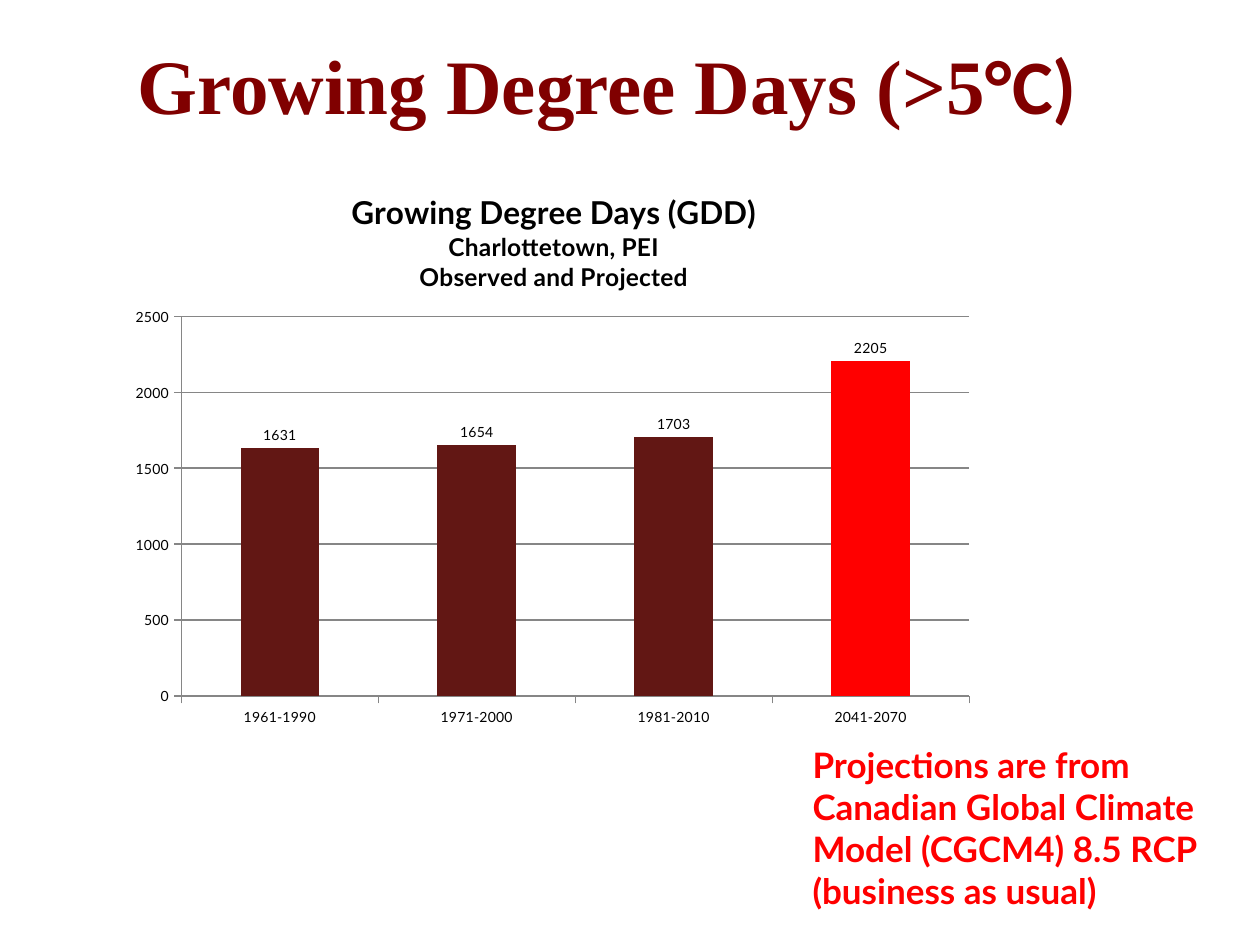
import pptx
import pptx.chart.data
import pptx.dml.color
import pptx.enum.chart
import pptx.enum.text
import pptx.oxml
import pptx.oxml.ns
import pptx.util
from pptx.util import Inches

MAROON = pptx.dml.color.RGBColor(0x80, 0x00, 0x00)
BROWN = pptx.dml.color.RGBColor(0x62, 0x17, 0x14)
RED = pptx.dml.color.RGBColor(0xFF, 0x00, 0x00)
BLACK = pptx.dml.color.RGBColor(0x00, 0x00, 0x00)
GRAY = pptx.dml.color.RGBColor(0x86, 0x86, 0x86)


def add_span(para, text, font, size, color):
    """Add one bold run to a paragraph."""
    span = para.add_run()
    span.text = text
    span.font.name = font
    span.font.size = pptx.util.Pt(size)
    span.font.bold = True
    span.font.color.rgb = color


def add_text_frame(page, bounds):
    """Add a wrapping text box and return its frame."""
    frame = page.shapes.add_textbox(*bounds).text_frame
    frame.word_wrap = True
    return frame


def add_title(page, bounds):
    """Place the centred page title."""
    frame = add_text_frame(page, bounds)
    frame.vertical_anchor = pptx.enum.text.MSO_ANCHOR.MIDDLE
    para = frame.paragraphs[0]
    para.alignment = pptx.enum.text.PP_ALIGN.CENTER
    add_span(para, "Growing Degree Days (>5", "Times New Roman", 44, MAROON)
    add_span(para, "°C)", "Calibri", 44, MAROON)


def add_projection_note(page, bounds):
    """Place the note on the source of the projections."""
    frame = add_text_frame(page, bounds)
    lines = [
        "Projections are from",
        "Canadian Global Climate Model (CGCM4) 8.5 RCP",
        "(business as usual)",
    ]
    for index, line in enumerate(lines):
        para = frame.add_paragraph() if index else frame.paragraphs[0]
        add_span(para, line, "Lato", 20, RED)


def set_plot_layout(chart, **fractions):
    """Fix the inner plot area as fractions of the chart."""
    area = chart._chartSpace.chart.plotArea
    for old in area.findall(pptx.oxml.ns.qn("c:layout")):
        area.remove(old)
    values = "".join(f'<c:{key} val="{value}"/>' for key, value in fractions.items())
    area.insert(0, pptx.oxml.parse_xml(
        f'<c:layout {pptx.oxml.ns.nsdecls("c")}><c:manualLayout>'
        '<c:layoutTarget val="inner"/><c:xMode val="edge"/><c:yMode val="edge"/>'
        f'{values}</c:manualLayout></c:layout>'))


def add_chart_title(chart):
    """Write the three-line chart title."""
    frame = chart.chart_title.text_frame
    chart.chart_title.include_in_layout = False
    lines = [("Growing Degree Days (GDD)", 18), ("Charlottetown, PEI", 14),
             ("Observed and Projected", 14)]
    for index, (line, size) in enumerate(lines):
        para = frame.add_paragraph() if index else frame.paragraphs[0]
        add_span(para, line, "Lato", size, BLACK)


def style_axes(chart):
    """Style the axes and the gridlines."""
    for axis in (chart.category_axis, chart.value_axis):
        axis.major_tick_mark = pptx.enum.chart.XL_TICK_MARK.OUTSIDE
        axis.minor_tick_mark = pptx.enum.chart.XL_TICK_MARK.NONE
        axis.format.line.color.rgb = GRAY
        axis.format.line.width = pptx.util.Pt(0.75)
    scale = chart.value_axis
    scale.minimum_scale, scale.maximum_scale, scale.major_unit = 0, 2500, 500
    scale.has_major_gridlines = True
    scale.major_gridlines.format.line.color.rgb = GRAY
    scale.major_gridlines.format.line.width = pptx.util.Pt(0.75)


def add_degree_days_chart(page, bounds):
    """Place the column chart of growing degree days."""
    data = pptx.chart.data.CategoryChartData(number_format="General")
    data.categories = ["1961-1990", "1971-2000", "1981-2010", "2041-2070"]
    data.add_series("Series 1", [1631, 1654, 1703, 2205])
    kind = pptx.enum.chart.XL_CHART_TYPE.COLUMN_CLUSTERED
    chart = page.shapes.add_chart(kind, *bounds, data).chart
    chart.has_legend = False
    chart.font.name = "Lato"
    chart.font.size = pptx.util.Pt(8)
    chart.font.color.rgb = BLACK
    add_chart_title(chart)
    style_axes(chart)
    set_plot_layout(chart, x=0.07, y=0.26, w=0.91, h=0.67)

    plot = chart.plots[0]
    plot.gap_width = 150
    plot.vary_by_categories = False
    columns = plot.series[0]
    columns.format.fill.solid()
    columns.format.fill.fore_color.rgb = BROWN
    projected = columns.points[3].format.fill
    projected.solid()
    projected.fore_color.rgb = RED
    labels = columns.data_labels
    labels.show_value = True
    labels.position = pptx.enum.chart.XL_LABEL_POSITION.OUTSIDE_END


def main():
    """Build the deck."""
    deck = pptx.Presentation()
    deck.slide_width, deck.slide_height = Inches(10), Inches(7.5)
    page = deck.slides.add_slide(deck.slide_layouts[6])
    add_title(page, (Inches(0.25), Inches(0.04), Inches(9.14), Inches(1.25)))
    add_projection_note(page, (Inches(6.35), Inches(5.85), Inches(3.65), Inches(1.45)))
    add_degree_days_chart(page, (Inches(0.96), Inches(1.34), Inches(6.87), Inches(4.5)))
    deck.save("out.pptx")


if __name__ == "__main__":
    main()
